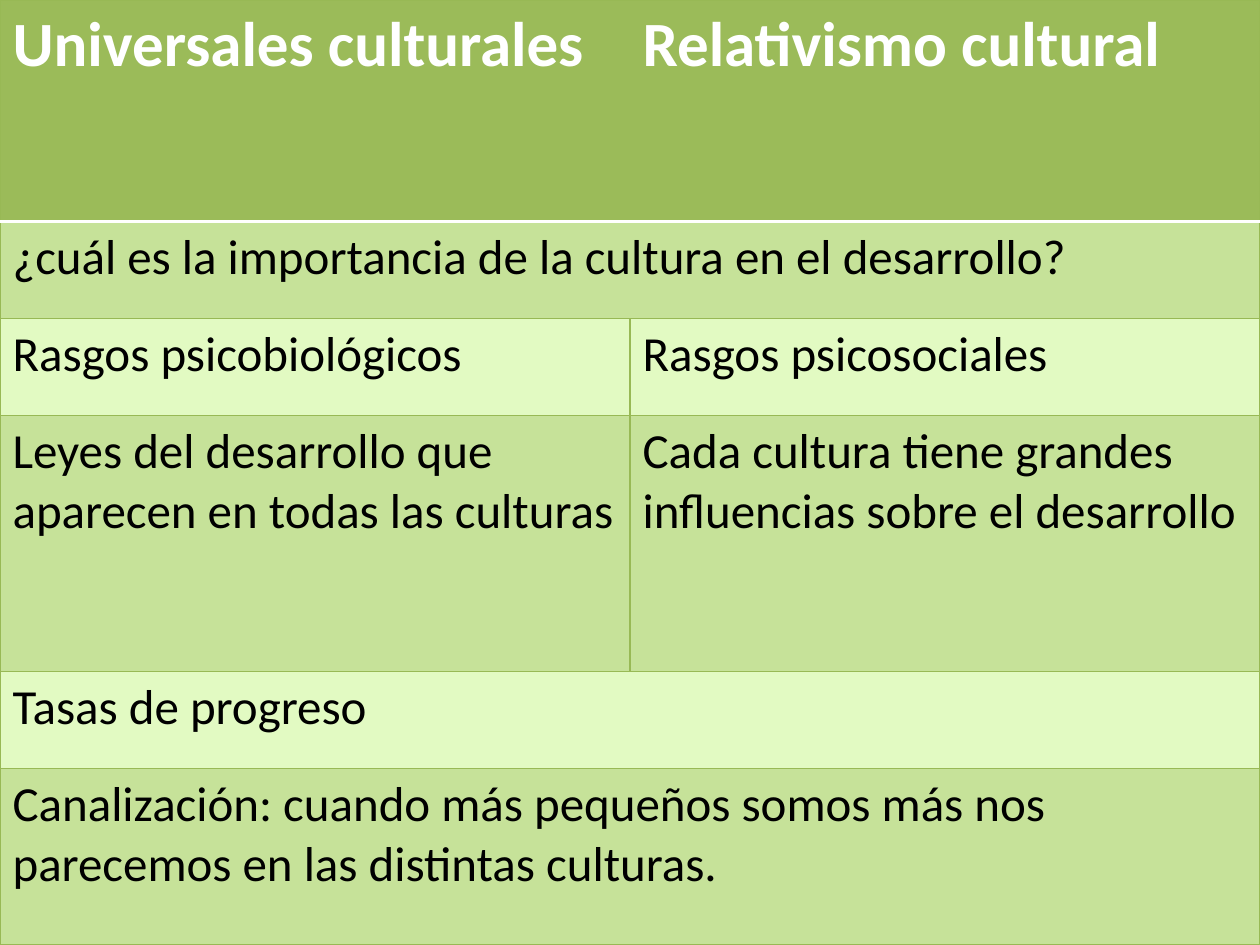
from lxml import etree
from pptx import Presentation
from pptx import util as u
from pptx.dml.color import RGBColor
from pptx.oxml.ns import qn

HEADER, DARK, LIGHT = "9BBB59", "C6E299", "E2FAC2"
WHITE, BLACK, GRID = "FFFFFF", "000000", "98B955"
ROWS = [
    (1.76, ["Universales culturales", "Relativismo cultural"]),
    (0.77, ["¿cuál es la importancia de la cultura en el desarrollo?"]),
    (0.77, ["Rasgos psicobiológicos", "Rasgos psicosociales"]),
    (2.03, ["Leyes del desarrollo que aparecen en todas las culturas",
            "Cada cultura tiene grandes influencias sobre el desarrollo"]),
    (0.77, ["Tasas de progreso"]),
    (1.4, ["Canalización: cuando más pequeños somos más nos parecemos "
           "en las distintas culturas."]),
]


def color(value):
    return RGBColor.from_string(value)


def write(cell, text, size=28, ink=BLACK, bold=False):
    run = cell.text_frame.paragraphs[0].add_run()
    run.text = text
    run.font.name = "Calibri"
    run.font.size = u.Pt(size)
    run.font.bold = bold
    run.font.color.rgb = color(ink)


def add_border(cell, side, ink, width):
    properties = cell._tc.get_or_add_tcPr()
    line = etree.SubElement(properties, qn("a:ln" + side), w=str(u.Pt(width)))
    if ink is None:
        etree.SubElement(line, qn("a:noFill"))
    else:
        fill = etree.SubElement(line, qn("a:solidFill"))
        etree.SubElement(fill, qn("a:srgbClr"), val=ink)


def format_cell(cell, row, column):
    borders = {side: (GRID, 0.75) for side in "LRTB"}
    if row == 0:
        borders["R" if column == 0 else "L"] = (None, 0.75)
        borders["B"] = (WHITE, 2)
    elif row == 1:
        borders["T"] = (WHITE, 2)
    for side, (ink, width) in borders.items():
        add_border(cell, side, ink, width)
    cell.fill.solid()
    shade = HEADER if row == 0 else DARK if row % 2 else LIGHT
    cell.fill.fore_color.rgb = color(shade)


def add_comparison(slide, left, top, width, height):
    shape = slide.shapes.add_table(len(ROWS), 2, left, top, width, height)
    table = shape.table
    table.first_row = table.horz_banding = False
    total = sum(share for share, texts in ROWS)
    for column in table.columns:
        column.width = width // 2
    for row, (share, texts) in enumerate(ROWS):
        table.rows[row].height = int(height * share / total)
        for column in range(2):
            format_cell(table.cell(row, column), row, column)
        if len(texts) == 1:
            table.cell(row, 0).merge(table.cell(row, 1))
        style = dict(size=36, ink=WHITE, bold=True) if row == 0 else {}
        for column, text in enumerate(texts):
            write(table.cell(row, column), text, **style)


def main():
    presentation = Presentation()
    presentation.slide_width = u.Inches(10)
    presentation.slide_height = u.Inches(7.5)
    slide = presentation.slides.add_slide(presentation.slide_layouts[6])
    add_comparison(slide, 0, 0, presentation.slide_width, presentation.slide_height)
    presentation.save("out.pptx")


if __name__ == "__main__":
    main()
